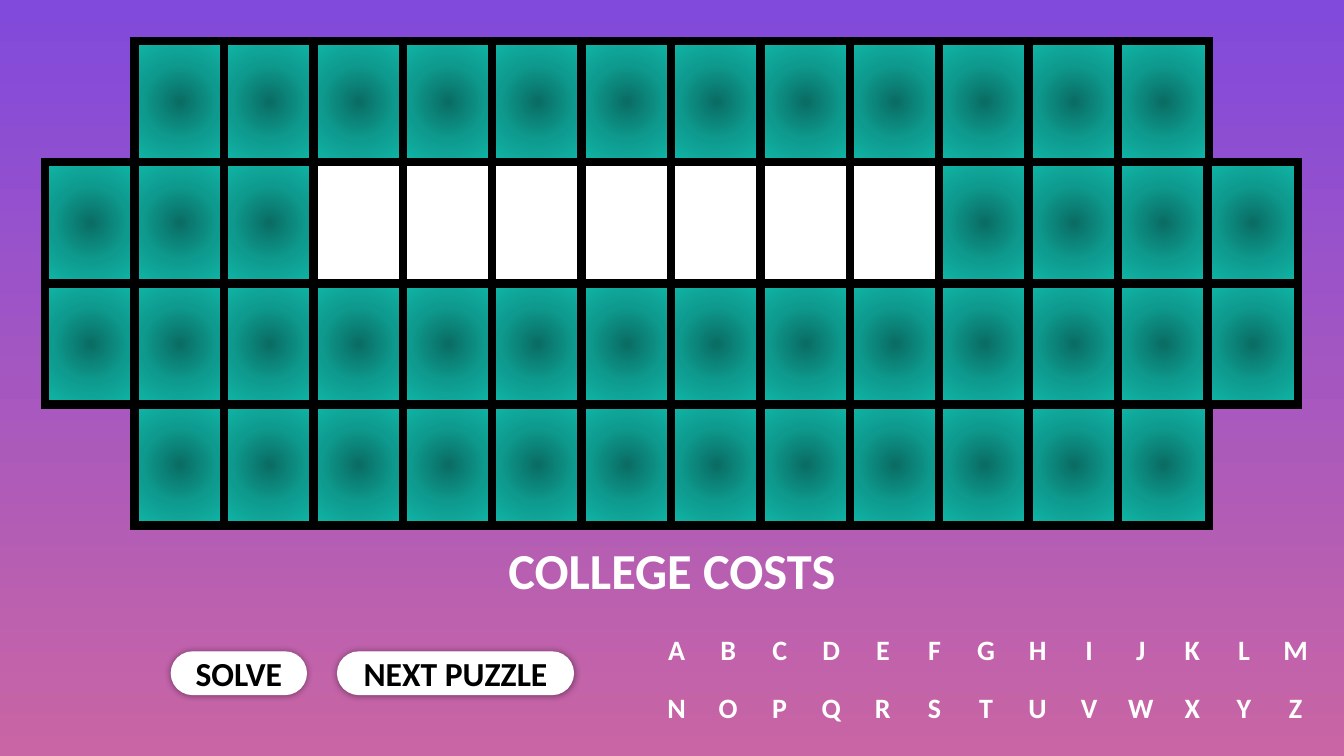
"""Build a letter-guessing puzzle board slide with its clue, buttons and alphabet."""
from dataclasses import dataclass

from lxml import etree
from pptx import Presentation
from pptx import oxml
from pptx import util as u
from pptx.dml import color
from pptx.enum import shapes, text
from pptx.oxml import ns
from pptx.shapes.autoshape import Shape
from pptx.slide import Slide

COLORS = {
    "sky": "8149DC",
    "dusk": "C965A4",
    "tile_core": "0A6C63",
    "tile_mid": "0E9A8E",
    "tile_edge": "10B7A8",
    "black": "000000",
    "white": "FFFFFF",
}
FONT = "Calibri"
BOARD_COLUMNS = 14
BOARD_LEFT, BOARD_TOP = 1.14, 1.04
COLUMN_STEP = (30.43 - BOARD_LEFT) / (BOARD_COLUMNS - 1)
ROW_STEP = 3.05
TILE_WIDTH, TILE_HEIGHT = 2.29, 3.05
ALPHABET_ROWS = ("ABCDEFGHIJKLM", "NOPQRSTUVWXYZ")
ALPHABET_LEFT, ALPHABET_TOP = 16.54, 15.57
LETTER_STEP, LETTER_ROW_STEP = 1.3, 1.47


@dataclass(frozen=True)
class BoardRow:
    """Columns covered by one board row, and those holding puzzle letters."""
    columns: range
    puzzle: range = range(0)


@dataclass(frozen=True)
class Button:
    """A pill button: label, left edge and width in centimetres."""
    label: str
    left: float
    width: float


BOARD = (
    BoardRow(range(1, 13)),
    BoardRow(range(14), range(3, 10)),
    BoardRow(range(14)),
    BoardRow(range(1, 13)),
)
BUTTONS = (Button("SOLVE", 4.32, 3.4), Button("NEXT PUZZLE", 8.51, 5.94))


def rgb(name: str) -> color.RGBColor:
    """Return a named colour."""
    return color.RGBColor.from_string(COLORS[name])


def write(shape: Shape, words: str, *, size: float, ink: str) -> None:
    """Put one centred bold line of text in a shape."""
    frame = shape.text_frame
    frame.margin_left = frame.margin_right = 0
    frame.margin_top = frame.margin_bottom = 0
    frame.word_wrap = True
    frame.vertical_anchor = text.MSO_ANCHOR.MIDDLE
    line = frame.paragraphs[0]
    line.alignment = text.PP_ALIGN.CENTER
    run = line.add_run()
    run.text = words
    run.font.name = FONT
    run.font.size = u.Pt(size)
    run.font.bold = True
    run.font.color.rgb = rgb(ink)


def add_label(slide: Slide, words: str, left: float, top: float,
              width: float, height: float, *, size: float) -> None:
    """Add a white text box."""
    box = slide.shapes.add_textbox(u.Cm(left), u.Cm(top), u.Cm(width), u.Cm(height))
    write(box, words, size=size, ink="white")


def paint_radial(shape: Shape) -> None:
    """Fill a shape with the tile gradient, dark at its centre."""
    shape.fill.gradient()
    plain = shape._element.spPr.find(ns.qn("a:gradFill"))
    names = ((0, "tile_core"), (50, "tile_mid"), (100, "tile_edge"))
    stops = "".join(
        f'<a:gs pos="{place * 1000}"><a:srgbClr val="{COLORS[name]}"/></a:gs>'
        for place, name in names)
    radial = oxml.parse_xml(
        f'<a:gradFill {ns.nsdecls("a")} rotWithShape="1"><a:gsLst>{stops}</a:gsLst>'
        '<a:path path="circle"><a:fillToRect l="50000" t="50000" r="50000" b="50000"/>'
        '</a:path></a:gradFill>')
    plain.getparent().replace(plain, radial)


def add_tile(slide: Slide, row: int, column: int, *, blank: bool) -> None:
    """Add one board tile, white when it hides a puzzle letter."""
    tile = slide.shapes.add_shape(
        shapes.MSO_SHAPE.RECTANGLE,
        u.Cm(BOARD_LEFT + column * COLUMN_STEP), u.Cm(BOARD_TOP + row * ROW_STEP),
        u.Cm(TILE_WIDTH), u.Cm(TILE_HEIGHT))
    tile.shadow.inherit = False
    if blank:
        tile.fill.solid()
        tile.fill.fore_color.rgb = rgb("white")
    else:
        paint_radial(tile)
    tile.line.color.rgb = rgb("black")
    tile.line.width = u.Pt(6)
    outline = tile._element.spPr.find(ns.qn("a:ln"))
    etree.SubElement(outline, ns.qn("a:miter"), lim="800000")


def add_button(slide: Slide, button: Button) -> None:
    """Add a white pill button with a soft shadow."""
    pill = slide.shapes.add_shape(
        shapes.MSO_SHAPE.ROUNDED_RECTANGLE,
        u.Cm(button.left), u.Cm(16.43), u.Cm(button.width), u.Cm(1.07))
    pill.adjustments[0] = 0.5
    pill.fill.solid()
    pill.fill.fore_color.rgb = rgb("white")
    pill.line.color.rgb = rgb("white")
    pill.line.width = u.Pt(1)
    pill.shadow.inherit = False
    pill._element.spPr.find(ns.qn("a:effectLst")).append(oxml.parse_xml(
        f'<a:outerShdw {ns.nsdecls("a")} blurRad="{u.Pt(5)}" dist="0" dir="0">'
        f'<a:srgbClr val="{COLORS["black"]}"><a:alpha val="40000"/></a:srgbClr>'
        '</a:outerShdw>'))
    write(pill, button.label, size=24, ink="black")


def paint_background(slide: Slide) -> None:
    """Blend the background from violet at the top to pink at the bottom."""
    fill = slide.background.fill
    fill.gradient()
    fill.gradient_angle = 270
    for stop, name in zip(fill.gradient_stops, ("sky", "dusk")):
        stop.color.rgb = rgb(name)


def main() -> None:
    """Build and save the slide."""
    deck = Presentation()
    deck.slide_width, deck.slide_height = u.Cm(33.87), u.Cm(19.05)
    slide = deck.slides.add_slide(deck.slide_layouts[6])
    paint_background(slide)
    for row, board_row in enumerate(BOARD):
        for column in board_row.columns:
            add_tile(slide, row, column, blank=column in board_row.puzzle)
    add_label(slide, "COLLEGE COSTS", 0, 13.56, 33.87, 1.57, size=36)
    for button in BUTTONS:
        add_button(slide, button)
    for row, letters in enumerate(ALPHABET_ROWS):
        for column, letter in enumerate(letters):
            add_label(slide, letter, ALPHABET_LEFT + column * LETTER_STEP,
                      ALPHABET_TOP + row * LETTER_ROW_STEP, 1.02, 1.57, size=20)
    deck.save("out.pptx")


if __name__ == "__main__":
    main()
